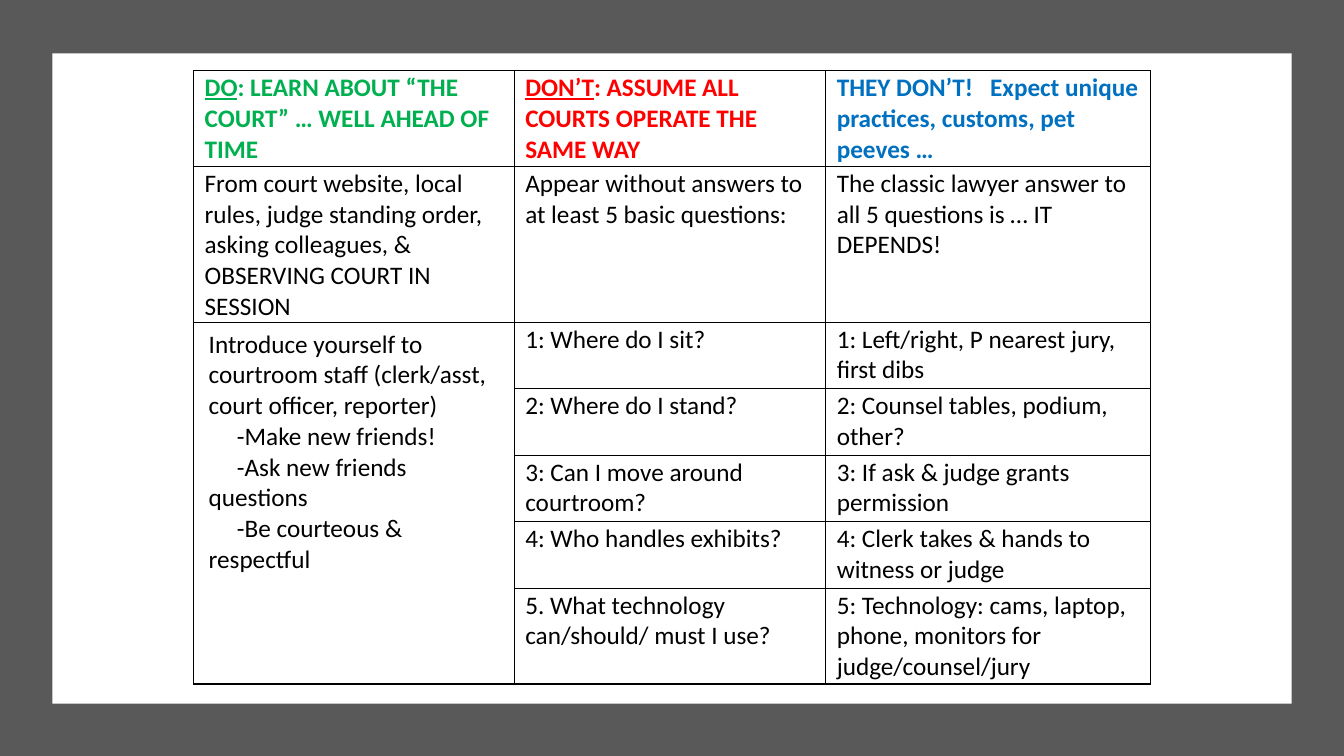
from lxml.etree import SubElement
from pptx import Presentation
from pptx.dml.color import RGBColor
from pptx.enum.shapes import MSO_SHAPE
from pptx.oxml.ns import qn
from pptx.util import Inches, Pt

COLORS = {
    "frame": "595959", "paper": "FFFFFF", "text": "000000",
    "do": "00B050", "dont": "FF0000", "they": "0070C0",
}
WIDTH, HEIGHT = 13.33, 7.5
COLUMNS = [3.18, 3.09, 3.22]
ROWS = [0.95, 1.54] + [0.66] * 4 + [0.95]
STAFF_ROW, LAST_ROW = 2, len(ROWS) - 1
THICK, THIN = Pt(1.25), Pt(0.75)

HEADINGS = [
    ("do", "DO", ": LEARN ABOUT “THE COURT” … WELL AHEAD OF TIME"),
    ("dont", "DON’T", ": ASSUME ALL COURTS OPERATE THE SAME WAY"),
    ("they", "", "THEY DON’T!   Expect unique practices, customs, pet peeves …"),
]
OVERVIEW = [
    "From court website, local rules, judge standing order, asking colleagues, "
    "& OBSERVING COURT IN SESSION",
    "Appear without answers to at least 5 basic questions:",
    "The classic lawyer answer to all 5 questions is … IT DEPENDS!",
]
STAFF = [
    "Introduce yourself to courtroom staff (clerk/asst, court officer, reporter)",
    "-Make new friends!",
    "-Ask new friends questions",
    "-Be courteous & respectful",
]
QUESTIONS = [
    ("1: Where do I sit?", "1: Left/right, P nearest jury, first dibs"),
    ("2: Where do I stand?", "2: Counsel tables, podium, other?"),
    ("3: Can I move around courtroom?", "3: If ask & judge grants permission"),
    ("4: Who handles exhibits?", "4: Clerk takes & hands to witness or judge"),
    ("5. What technology can/should/ must I use?",
     "5: Technology: cams, laptop, phone, monitors for judge/counsel/jury"),
]


def add_span(para, text, color="text", bold=False, underline=False):
    span = para.add_run()
    span.text = text
    span.font.name = "Calibri"
    span.font.size = Pt(18)
    span.font.bold = bold
    span.font.underline = underline
    span.font.color.rgb = RGBColor.from_string(COLORS[color])


def add_border(cell, side, width):
    line = SubElement(cell._tc.get_or_add_tcPr(), qn(f"a:ln{side}"), w=str(width))
    fill = SubElement(line, qn("a:solidFill"))
    SubElement(fill, qn("a:srgbClr"), val=COLORS["text"])


deck = Presentation()
deck.slide_width, deck.slide_height = Inches(WIDTH), Inches(HEIGHT)
page = deck.slides.add_slide(deck.slide_layouts[6])

# Dark frame around a white sheet
for color, left, top, width, height in [
    ("frame", 0, 0, WIDTH, HEIGHT),
    ("paper", 0.52, 0.53, 12.29, 6.45),
]:
    box = page.shapes.add_shape(
        MSO_SHAPE.RECTANGLE, Inches(left), Inches(top), Inches(width), Inches(height))
    box.shadow.inherit = False
    box.fill.solid()
    box.fill.fore_color.rgb = RGBColor.from_string(COLORS[color])
    box.line.fill.background()

# Table grid
table = page.shapes.add_table(
    len(ROWS), len(COLUMNS), Inches(1.92), Inches(0.7),
    Inches(sum(COLUMNS)), Inches(sum(ROWS))).table
table.first_row = table.horz_banding = False
for column, width in zip(table.columns, COLUMNS):
    column.width = Inches(width)
for row, height in zip(table.rows, ROWS):
    row.height = Inches(height)

staff_cell = table.cell(STAFF_ROW, 0)
staff_cell.merge(table.cell(LAST_ROW, 0))

for r in range(len(ROWS)):
    for c in range(len(COLUMNS)):
        cell = table.cell(r, c)
        last = r + cell.span_height - 1 if cell.is_merge_origin else r
        cell.margin_left = cell.margin_right = Inches(0.11)
        cell.margin_top, cell.margin_bottom = Inches(0.02), 0
        add_border(cell, "L", THICK if c == 0 else THIN)
        add_border(cell, "R", THICK if c == len(COLUMNS) - 1 else THIN)
        add_border(cell, "T", THICK if r in (0, 1) else THIN)
        add_border(cell, "B", THICK if last in (0, LAST_ROW) else THIN)
        cell.fill.solid()
        cell.fill.fore_color.rgb = RGBColor.from_string(COLORS["paper"])

# Headings, overview and questions
for c, (color, lead, rest) in enumerate(HEADINGS):
    para = table.cell(0, c).text_frame.paragraphs[0]
    if lead:
        add_span(para, lead, color, bold=True, underline=True)
    add_span(para, rest, color, bold=True)

for c, text in enumerate(OVERVIEW):
    add_span(table.cell(1, c).text_frame.paragraphs[0], text)

for r, pair in enumerate(QUESTIONS, start=STAFF_ROW):
    for c, text in enumerate(pair, start=1):
        add_span(table.cell(r, c).text_frame.paragraphs[0], text)

# Courtroom staff, with the first line of each tip indented
staff_cell.margin_left = staff_cell.margin_right = Inches(0.15)
staff_cell.margin_top = staff_cell.margin_bottom = Inches(0.07)
frame = staff_cell.text_frame
for i, text in enumerate(STAFF):
    para = frame.add_paragraph() if i else frame.paragraphs[0]
    if i:
        properties = para._p.get_or_add_pPr()
        properties.set("marL", "0")
        properties.set("indent", str(Inches(0.28)))
    add_span(para, text)

deck.save("out.pptx")
